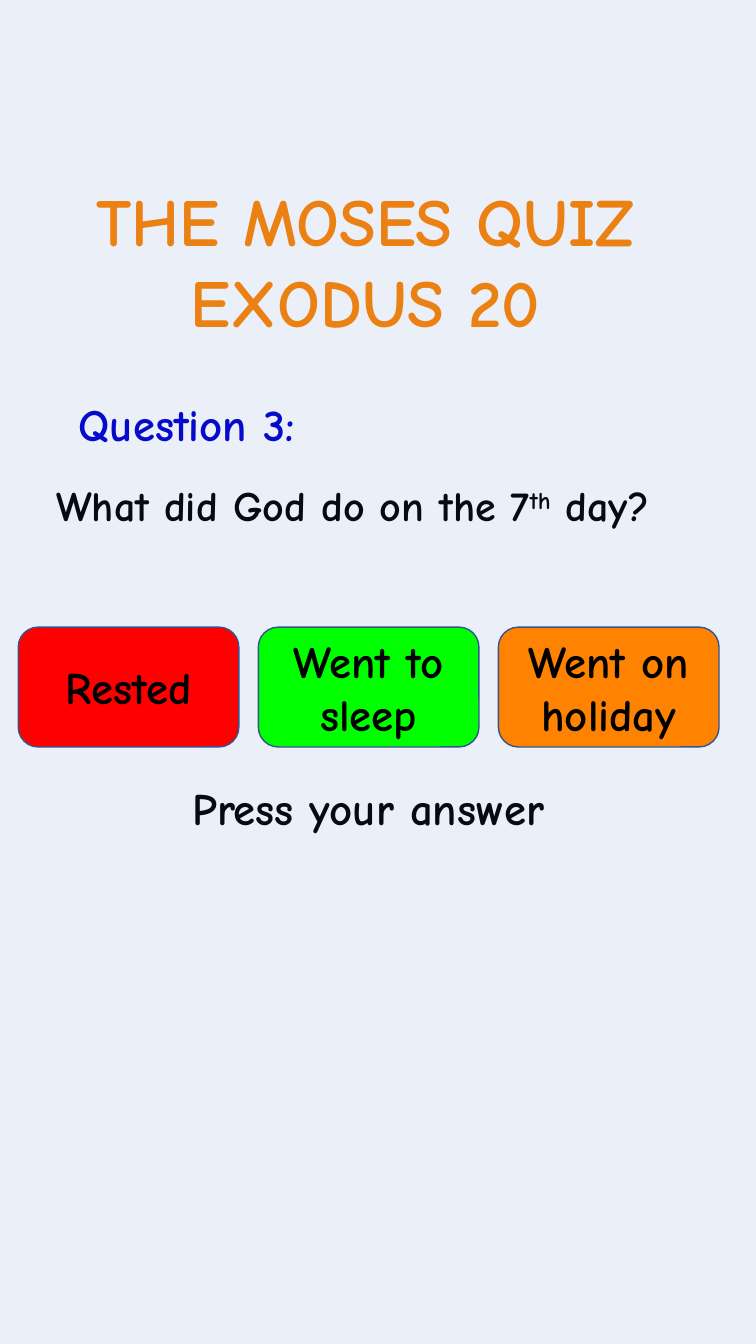
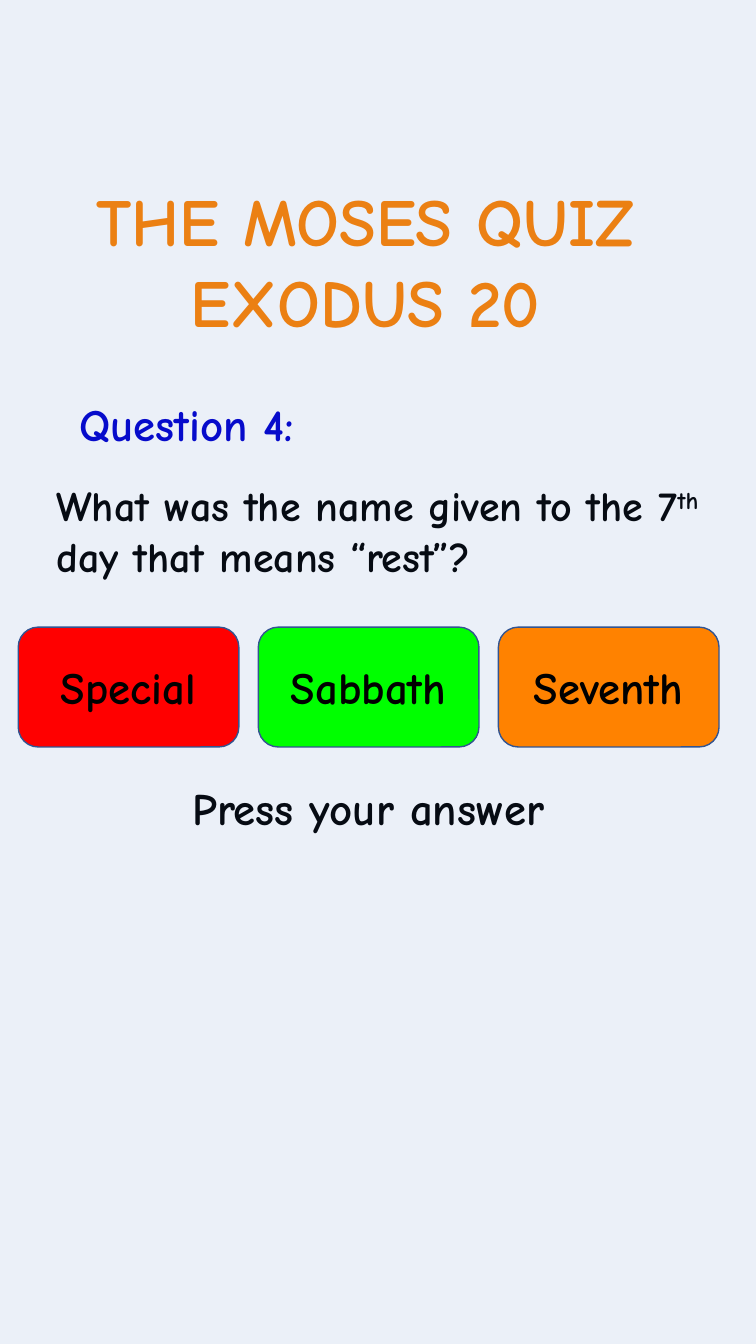
from dataclasses import dataclass

import pptx
import pptx.dml.color
import pptx.enum.shapes
import pptx.enum.text
import pptx.oxml
import pptx.oxml.ns
import pptx.presentation
import pptx.shapes.autoshape
import pptx.slide
import pptx.text.text
import pptx.util

Cm = pptx.util.Cm
Pt = pptx.util.Pt
PP_ALIGN = pptx.enum.text.PP_ALIGN
MSO_ANCHOR = pptx.enum.text.MSO_ANCHOR
MSO_SHAPE = pptx.enum.shapes.MSO_SHAPE

FONT = "Comic Neue"
COLORS = {
    "title": "FF8200",
    "question": "0000CC",
    "text": "000000",
    "tint": "4472C4",
    "outline": "325491",
}
BUTTON_COLORS = ("FF0000", "00FF00", "FF8200")
TITLE_LINES = ("THE MOSES QUIZ ", "EXODUS 20 ")
PROMPT = "Press your answer"

SLIDE_WIDTH, SLIDE_HEIGHT = Cm(19.05), Cm(33.86)
BUTTON_LEFT, BUTTON_TOP = Cm(0.46), Cm(15.8)
BUTTON_WIDTH, BUTTON_HEIGHT = Cm(5.56), Cm(3.02)
BUTTON_STEP = Cm(6.05)


@dataclass(frozen=True)
class Box:
    """A place on the slide, in centimetres."""
    left: float
    top: float
    width: float
    height: float

    def lengths(self) -> tuple[Cm, Cm, Cm, Cm]:
        return Cm(self.left), Cm(self.top), Cm(self.width), Cm(self.height)


@dataclass(frozen=True)
class Question:
    number: int
    before_ordinal: str
    after_ordinal: str
    answers: tuple[str, str, str]


TITLE_BOX = Box(0.76, 4.39, 17.5, 4.37)
NUMBER_BOX = Box(1.19, 9.88, 7.04, 1.63)
QUESTION_BOX = Box(1.17, 11.96, 17.63, 3.02)
PROMPT_BOX = Box(4.6, 19.69, 10.72, 1.83)

QUESTIONS = (
    Question(3, "What did God do on the 7", " day?",
             ("Rested", "Went to sleep", "Went on holiday")),
    Question(4, "What was the name given to the 7", " day that means “rest”?",
             ("Special", "Sabbath", "Seventh")),
)


def rgb(value: str) -> pptx.dml.color.RGBColor:
    return pptx.dml.color.RGBColor.from_string(value)


def add_run(paragraph: pptx.text.text._Paragraph, text: str, size: float = 32,
            color: str = COLORS["text"], superscript: bool = False) -> None:
    run = paragraph.add_run()
    run.text = text
    run.font.name = FONT
    run.font.size = Pt(size)
    run.font.bold = True
    run.font.color.rgb = rgb(color)
    if superscript:
        run._r.get_or_add_rPr().set("baseline", "30000")


def add_text_line(slide: pptx.slide.Slide, box: Box,
                  wrap: bool = True) -> pptx.text.text._Paragraph:
    """Add a text box and return its only paragraph, still empty."""
    frame = slide.shapes.add_textbox(*box.lengths()).text_frame
    frame.word_wrap = wrap
    return frame.paragraphs[0]


def set_title(slide: pptx.slide.Slide) -> None:
    title = slide.shapes.title
    title.left, title.top, title.width, title.height = TITLE_BOX.lengths()
    frame = title.text_frame
    frame.word_wrap = False
    frame.auto_size = pptx.enum.text.MSO_AUTO_SIZE.SHAPE_TO_FIT_TEXT
    frame.vertical_anchor = MSO_ANCHOR.TOP
    for index, line in enumerate(TITLE_LINES):
        paragraph = frame.add_paragraph() if index else frame.paragraphs[0]
        paragraph.alignment = PP_ALIGN.CENTER
        add_run(paragraph, line, 48, COLORS["title"])


def add_question(slide: pptx.slide.Slide, question: Question) -> None:
    number = add_text_line(slide, NUMBER_BOX, wrap=False)
    number.alignment = PP_ALIGN.CENTER
    add_run(number, f"Question {question.number}:", color=COLORS["question"])

    wording = add_text_line(slide, QUESTION_BOX)
    wording.line_spacing = Pt(36)
    wording.space_before = Pt(7.5)
    add_run(wording, question.before_ordinal, 30)
    add_run(wording, "th", 30, superscript=True)
    add_run(wording, question.after_ordinal, 30)

    prompt = add_text_line(slide, PROMPT_BOX)
    prompt.line_spacing = 0.9
    prompt.space_before = Pt(7.5)
    add_run(prompt, PROMPT)


def add_tint(slide: pptx.slide.Slide) -> None:
    """Lay a pale blue veil over the whole slide and the text below it."""
    tint = slide.shapes.add_shape(MSO_SHAPE.RECTANGLE, 0, 0,
                                  SLIDE_WIDTH, SLIDE_HEIGHT)
    tint.shadow.inherit = False
    tint.line.fill.background()
    tint.fill.solid()
    tint.fill.fore_color.rgb = rgb(COLORS["tint"])
    color = tint._element.spPr.find(".//" + pptx.oxml.ns.qn("a:srgbClr"))
    color.append(pptx.oxml.parse_xml(
        f'<a:alpha {pptx.oxml.ns.nsdecls("a")} val="10000"/>'))


def add_answers(slide: pptx.slide.Slide, answers: tuple[str, str, str]) -> None:
    for column, (answer, color) in enumerate(zip(answers, BUTTON_COLORS)):
        button = slide.shapes.add_shape(
            MSO_SHAPE.ROUNDED_RECTANGLE, BUTTON_LEFT + column * BUTTON_STEP,
            BUTTON_TOP, BUTTON_WIDTH, BUTTON_HEIGHT)
        button.shadow.inherit = False
        button.fill.solid()
        button.fill.fore_color.rgb = rgb(color)
        button.line.color.rgb = rgb(COLORS["outline"])
        button.line.width = Pt(1)
        frame = button.text_frame
        frame.word_wrap = True
        frame.vertical_anchor = MSO_ANCHOR.MIDDLE
        label = frame.paragraphs[0]
        label.alignment = PP_ALIGN.CENTER
        add_run(label, answer)


def add_quiz_slide(deck: pptx.presentation.Presentation,
                   question: Question) -> None:
    slide = deck.slides.add_slide(deck.slide_layouts.get_by_name("Title Only"))
    set_title(slide)
    add_question(slide, question)
    add_tint(slide)
    add_answers(slide, question.answers)


def main() -> None:
    deck = pptx.Presentation()
    deck.slide_width, deck.slide_height = SLIDE_WIDTH, SLIDE_HEIGHT
    for question in QUESTIONS:
        add_quiz_slide(deck, question)
    deck.save("out.pptx")


if __name__ == "__main__":
    main()
